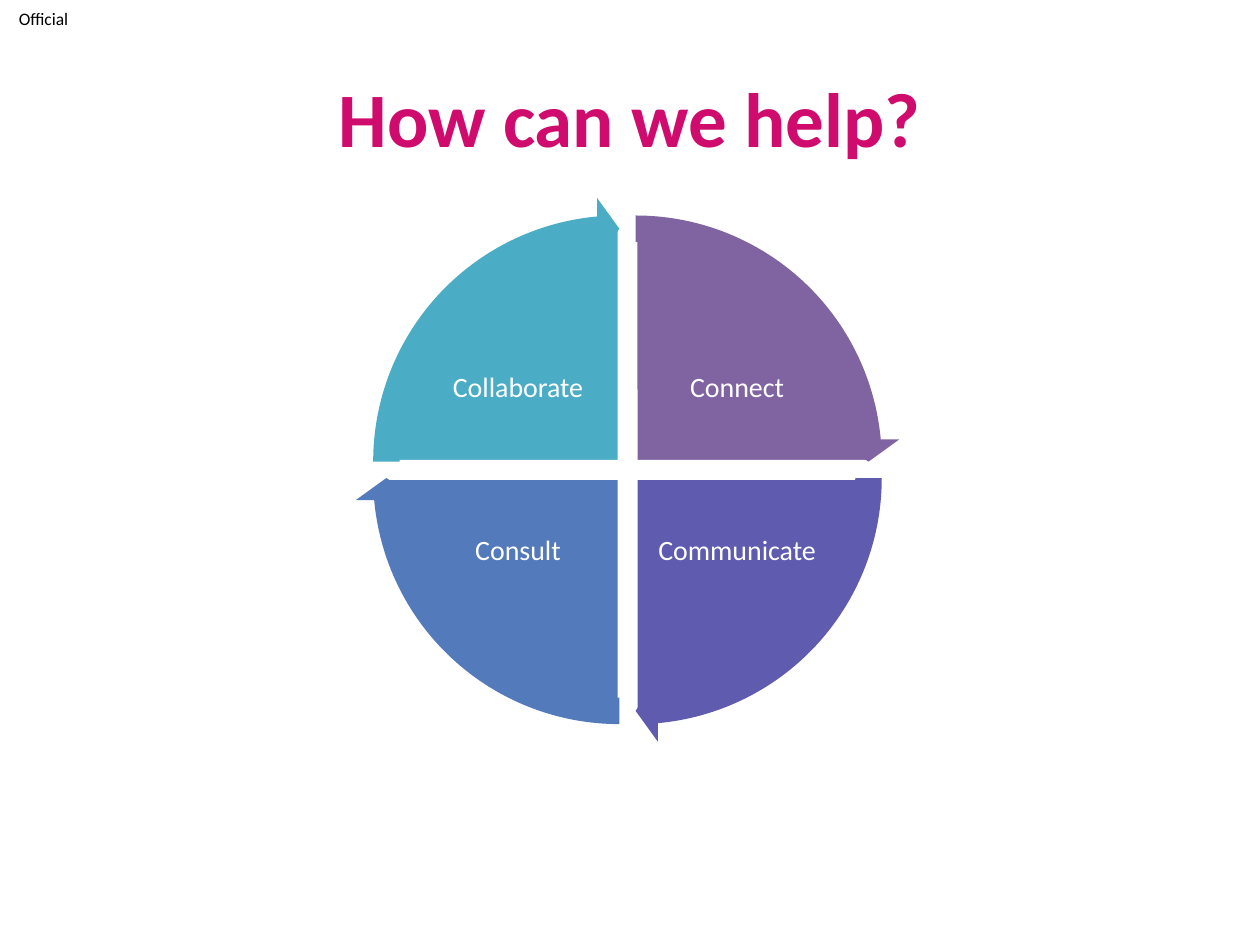
"""Builds the "How can we help?" slide with a four-part cycle."""
from pptx import Presentation
from pptx.dml.color import RGBColor
from pptx.enum.shapes import MSO_SHAPE
from pptx.enum.text import MSO_ANCHOR, PP_ALIGN
from pptx.util import Pt

COLORS = {
    "label": "000000",
    "title": "CF0B6D",
    "white": "FFFFFF",
    "Connect": "8064A2",
    "Communicate": "5F5BAE",
    "Consult": "537ABA",
    "Collaborate": "4BACC6",
}
CENTER_X, CENTER_Y = 358.6, 268.5
GAP = 4.7
PIE_SIZE, ARROW_SIZE = 268.6, 302.4
NAME_WIDTH, NAME_HEIGHT = 99.4, 73.4
NAME_DX, NAME_DY = 62.6, 46.4
QUARTER, FULL_TURN = 54, 216
STEPS = [
    ("Connect", 1, -1, 162),
    ("Communicate", 1, 1, 0),
    ("Consult", -1, 1, 54),
    ("Collaborate", -1, -1, 108),
]

deck = Presentation()
deck.slide_width, deck.slide_height = Pt(720), Pt(540)
slide = deck.slides.add_slide(deck.slide_layouts[6])


def add_text(text, left, top, width, height, size, color, inset=0, bold=False):
    box = slide.shapes.add_textbox(Pt(left), Pt(top), Pt(width), Pt(height))
    frame = box.text_frame
    frame.text = text
    frame.word_wrap = True
    frame.vertical_anchor = MSO_ANCHOR.MIDDLE
    frame.margin_left = frame.margin_right = Pt(inset)
    frame.margin_top = frame.margin_bottom = Pt(inset)
    paragraph = frame.paragraphs[0]
    paragraph.alignment = PP_ALIGN.CENTER
    font = paragraph.runs[0].font
    font.name, font.size, font.bold = "Calibri", Pt(size), bold
    font.color.rgb = RGBColor.from_string(COLORS[color])
    return paragraph


def add_part(preset, step, size, adjustments):
    name, side_x, side_y, _ = step
    part = slide.shapes.add_shape(
        preset,
        Pt(CENTER_X + side_x * GAP - size / 2),
        Pt(CENTER_Y + side_y * GAP - size / 2),
        Pt(size), Pt(size))
    for index, value in enumerate(adjustments):
        part.adjustments[index] = value
    part.shadow.inherit = False
    part.fill.solid()
    part.fill.fore_color.rgb = RGBColor.from_string(COLORS[name])
    return part


add_text("Official", 0, 0, 49.7, 20.9, 10, "label")
add_text("How can we help?", 36, 21.6, 648, 90, 44, "title", inset=3.6, bold=True)

for step in STEPS:
    name, side_x, side_y, start = step
    sector = add_part(MSO_SHAPE.PIE, step, PIE_SIZE, [start, (start + QUARTER) % FULL_TURN])
    sector.line.color.rgb = RGBColor.from_string(COLORS["white"])
    sector.line.width = Pt(2)
    caption = add_text(
        name,
        CENTER_X + side_x * NAME_DX - NAME_WIDTH / 2,
        CENTER_Y + side_y * NAME_DY - NAME_HEIGHT / 2,
        NAME_WIDTH, NAME_HEIGHT, 16, "white", inset=1.6)
    caption.line_spacing = 0.9

for step in STEPS:
    start = step[3]
    arrow = add_part(MSO_SHAPE.CIRCULAR_ARROW, step, ARROW_SIZE,
                     [0.05, 3.28, start + 50.73, start, 0.06])
    arrow.line.fill.background()

deck.save("out.pptx")
